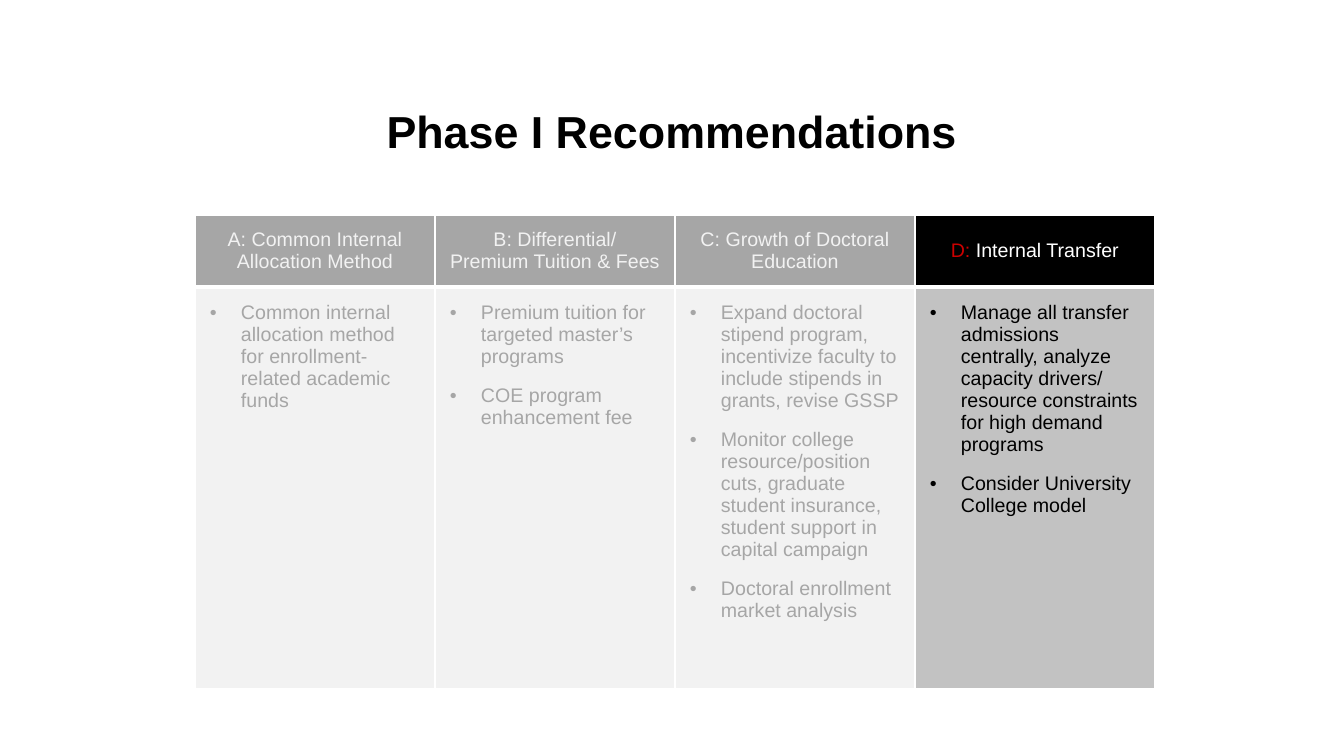
from lxml import etree
from pptx import Presentation
from pptx.dml.color import RGBColor
from pptx.enum.text import MSO_ANCHOR, PP_ALIGN
from pptx.oxml.ns import qn
from pptx.util import Pt

MIDDLE, TOP = MSO_ANCHOR.MIDDLE, MSO_ANCHOR.TOP
CENTER, LEFT = PP_ALIGN.CENTER, PP_ALIGN.LEFT
PX = 914400 / 100.8  # EMU in one px
COLUMN_WIDTH, HEADER_HEIGHT, BODY_HEIGHT = 240, 72, 402
INSET, INDENT = 15, 31
WHITE, BLACK, RED = "FFFFFF", "000000", "CC0000"
PALE, GREY, SILVER = "F2F2F2", "A6A6A6", "C2C2C2"


def px(length):
    return round(length * PX)


def rgb(color):
    return RGBColor.from_string(color)


# Each column: header lines made of (text, color) spans, bullets and colors
columns = [
    ([[("A: Common Internal Allocation Method", PALE)]],
     ["Common internal allocation method for enrollment-related academic funds"],
     GREY, PALE, GREY),
    ([[("B: Differential/", PALE)], [("Premium Tuition & Fees", PALE)]],
     ["Premium tuition for targeted master’s programs",
      "COE program enhancement fee"],
     GREY, PALE, GREY),
    ([[("C: Growth of Doctoral Education", PALE)]],
     ["Expand doctoral stipend program, incentivize faculty to include "
      "stipends in grants, revise GSSP",
      "Monitor college resource/position cuts, graduate student insurance, "
      "student support in capital campaign",
      "Doctoral enrollment market analysis"],
     GREY, PALE, GREY),
    ([[("D:", RED), (" Internal Transfer", WHITE)]],
     ["Manage all transfer admissions centrally, analyze capacity drivers/ "
      "resource constraints for high demand programs",
      "Consider University College model"],
     BLACK, SILVER, BLACK),
]

deck = Presentation()
deck.slide_width, deck.slide_height = px(1344), px(756)
page = deck.slides.add_slide(deck.slide_layouts[6])

# Title
box = page.shapes.add_textbox(px(168), px(74), px(1008), px(113))
box.text_frame.word_wrap = True
box.text_frame.vertical_anchor = MIDDLE
para = box.text_frame.paragraphs[0]
para.text = "Phase I Recommendations"
para.alignment = CENTER
para.font.name, para.font.size, para.font.bold = "Arial", Pt(32), True
para.font.color.rgb = rgb(BLACK)

# Table
table = page.shapes.add_table(
    2, len(columns), px(195), px(215),
    px(COLUMN_WIDTH * len(columns)), px(HEADER_HEIGHT + BODY_HEIGHT)).table
table.first_row = table.horz_banding = False
table.rows[0].height, table.rows[1].height = px(HEADER_HEIGHT), px(BODY_HEIGHT)

for column, (header, bullets, header_fill, body_fill, body_color) in enumerate(columns):
    table.columns[column].width = px(COLUMN_WIDTH)
    body = [[(bullet, body_color)] for bullet in bullets]
    for row, (lines, fill) in enumerate([(header, header_fill), (body, body_fill)]):
        cell = table.cell(row, column)
        is_body = row == 1

        # White borders, thicker between header and body
        properties = cell._tc.get_or_add_tcPr()
        for side in ("L", "R", "T", "B"):
            thick = side == ("T" if is_body else "B")
            line = etree.SubElement(properties, qn("a:ln" + side),
                                    w=str(Pt(3 if thick else 1)))
            solid = etree.SubElement(line, qn("a:solidFill"))
            etree.SubElement(solid, qn("a:srgbClr"), val=WHITE)
        cell.fill.solid()
        cell.fill.fore_color.rgb = rgb(fill)
        cell.vertical_anchor = TOP if is_body else MIDDLE
        if is_body:
            cell.margin_left = cell.margin_right = px(INSET)
            cell.margin_top = cell.margin_bottom = px(INSET)

        # Cell text
        for index, spans in enumerate(lines):
            frame = cell.text_frame
            para = frame.add_paragraph() if index else frame.paragraphs[0]
            para.alignment = LEFT if is_body else CENTER
            if is_body:
                para.space_after = Pt(12)
                settings = para._p.get_or_add_pPr()
                settings.set("marL", str(px(INDENT)))
                settings.set("indent", str(-px(INDENT)))
                etree.SubElement(settings, qn("a:buFont"), typeface="Arial")
                etree.SubElement(settings, qn("a:buChar"), char="•")
            para.font.name, para.font.size = "Arial", Pt(14)
            for text, color in spans:
                span = para.add_run()
                span.text = text
                if len(spans) > 1:
                    span.font.color.rgb = rgb(color)
                else:
                    para.font.color.rgb = rgb(color)

deck.save("out.pptx")
